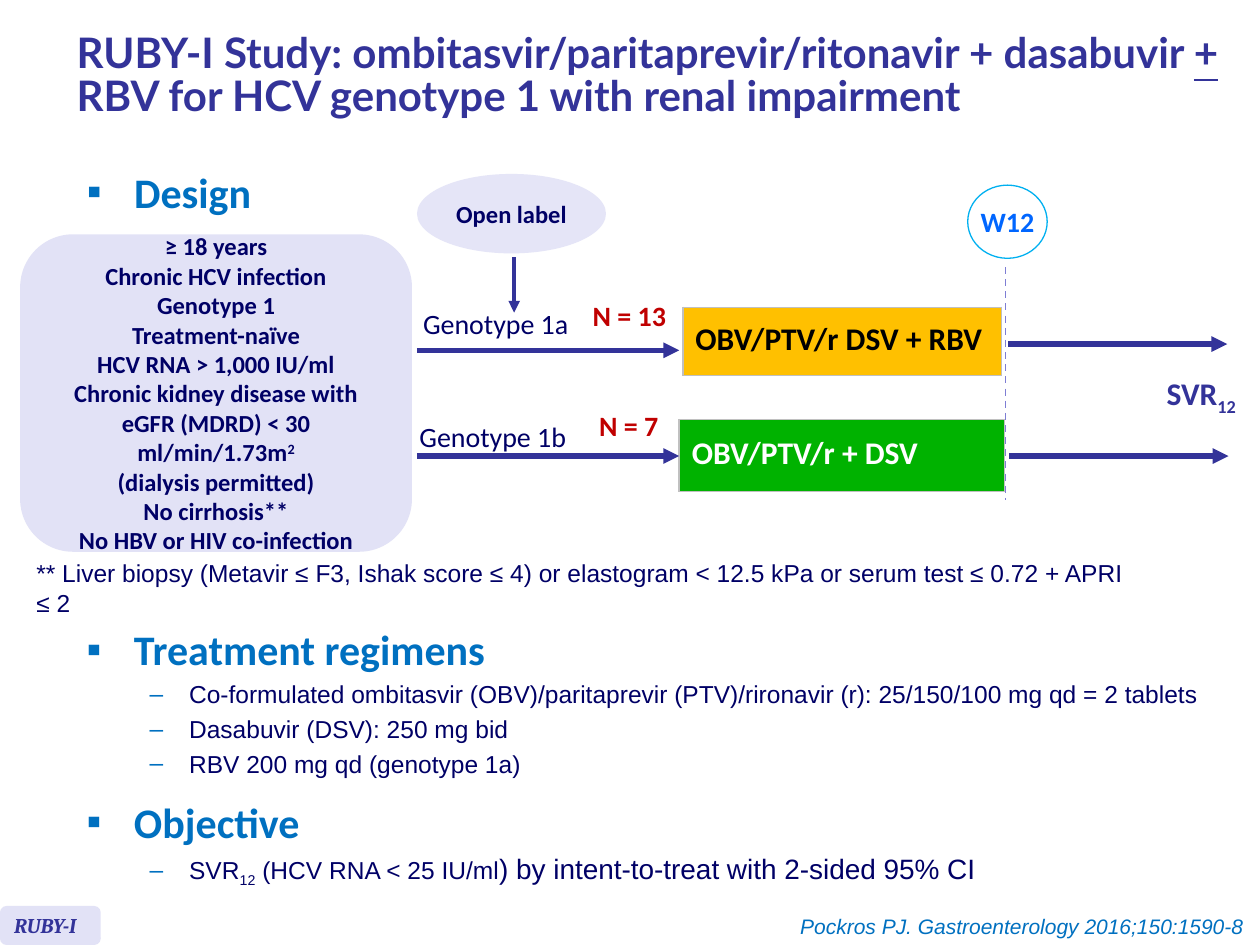
"""Builds the RUBY-I study design slide."""
from lxml import etree
from pptx import Presentation
from pptx.dml.color import RGBColor
from pptx.enum.dml import MSO_LINE_DASH_STYLE as Dash
from pptx.enum.shapes import MSO_CONNECTOR as Conn, MSO_SHAPE as Shape
from pptx.enum.text import MSO_ANCHOR as Anchor, PP_ALIGN as Align
from pptx.oxml.ns import qn
from pptx.util import Pt

INDIGO, NAVY, BLUE, RED, PALE = "333399", "000066", "0070C0", "C00000", "E2E2F6"

TITLE = [("RUBY-I Study: ombitasvir/paritaprevir/ritonavir + dasabuvir ", {}),
         ("+", {"underline": True}),
         (" RBV for HCV genotype 1 with renal impairment", {})]
CRITERIA = ["≥ 18 years", "Chronic HCV infection", "Genotype 1", "Treatment-naïve",
            "HCV RNA > 1,000 IU/ml", "Chronic kidney disease with",
            [("eGFR (MDRD) < 30 ml/min/1.73m", {}), ("2", {"base": 30})],
            "(dialysis permitted)", "No cirrhosis**", "No HBV or HIV co-infection"]
SECTIONS = [
    ((42.5, 91.4, 142.6, 45.4), "Design", []),
    ((42.5, 352.8, 657.4, 107.3), "Treatment regimens", [
        "Co-formulated ombitasvir (OBV)/paritaprevir (PTV)/rironavir (r): "
        "25/150/100 mg qd = 2 tablets",
        "Dasabuvir (DSV): 250 mg bid",
        "RBV 200 mg qd (genotype 1a)"]),
    ((42.5, 451.4, 657.4, 67), "Objective", [
        [("SVR", {}), ("12", {"base": -25}), (" (HCV RNA < 25 IU/ml", {}),
         (") by intent-to-treat with 2-sided 95% CI", {"size": 16})]]),
]
ARMS = [("OBV/PTV/r + DSV", (388.1, 239.8, 185.8, 41), "00B200", "FFFFFF"),
        ("OBV/PTV/r DSV + RBV", (390.2, 175.7, 182.2, 38.9), "FFC000", "000000")]
ARROWS = [((293.8, 146.9, 293.8, 178.6), 2.25),
          ((238.3, 200.2, 388.1, 200.2), 3),
          ((238.3, 260.6, 388.1, 260.6), 3),
          ((576, 196.6, 701.3, 196.6), 3),
          ((576.7, 260.6, 702, 260.6), 3)]
SHAPES = [
    (Shape.OVAL, (238.3, 99.4, 108, 45.4), "E5E5F7", None, ["Open label"],
     Align.CENTER, dict(size=14, color=NAVY, bold=True)),
    (Shape.ROUNDED_RECTANGLE, (11.5, 133.9, 223.9, 181.4), PALE, None, CRITERIA,
     Align.CENTER, dict(size=14, color=NAVY, bold=True)),
    (Shape.ROUNDED_RECTANGLE, (0, 517.7, 57.6, 22.3), PALE, None, ["RUBY-I"],
     Align.LEFT, dict(size=12, name="Cambria", color=INDIGO, bold=True, italic=True)),
    (Shape.OVAL, (553, 105.8, 45.4, 41.8), "FFFFFF", "00B0F0", ["W12"],
     Align.CENTER, dict(size=16, color="0066FF", bold=True)),
]
COUNT = dict(size=16, color=RED, bold=True)
GENOTYPE = dict(size=16, color=NAVY)
LABELS = [
    ([("SVR", {}), ("12", {"base": -25})], (659.5, 210.2, 56.2, 28.8), Align.LEFT,
     dict(size=18, color=INDIGO, bold=True)),
    ("** Liver biopsy (Metavir ≤ F3, Ishak score ≤ 4) or elastogram < 12.5 kPa "
     "or serum test ≤ 0.72 + APRI ≤ 2", (13.7, 315.4, 643.7, 24.5), Align.LEFT,
     dict(size=14, name="Arial", color=NAVY)),
    ("N = 13", (331.2, 167, 56.9, 26.6), Align.CENTER, COUNT),
    ("N = 7", (334.8, 229.7, 49, 26.6), Align.CENTER, COUNT),
    ("Genotype 1a", (234.7, 171.4, 98.6, 26.6), Align.LEFT, GENOTYPE),
    ("Genotype 1b", (232.6, 236.2, 99.4, 26.6), Align.LEFT, GENOTYPE),
    ("Pockros PJ. Gastroenterology 2016;150:1590-8", (441.4, 518.4, 276.5, 21.6),
     Align.RIGHT, dict(size=12, name="Arial", color=BLUE, italic=True)),
]


def rgb(color):
    return RGBColor.from_string(color)


def pts(values):
    return [Pt(v) for v in values]


def style(r, size, color, name="Calibri", bold=False, italic=False, underline=None, base=0):
    f = r.font
    f.size, f.name, f.bold, f.italic = Pt(size), name, bold, italic
    f.color.rgb = rgb(color)
    if underline:
        f.underline = True
    if base:
        r._r.get_or_add_rPr().set("baseline", str(base * 1000))


def write(p, content, look, align=Align.LEFT):
    p.alignment = align
    for text, extra in [(content, {})] if isinstance(content, str) else content:
        r = p.add_run()
        r.text = text
        style(r, **{**look, **extra})


def paragraphs(tf, count):
    return [tf.paragraphs[0]] + [tf.add_paragraph() for _ in range(count - 1)]


def bullet(p, char, left, hanging):
    pPr = p._p.get_or_add_pPr()
    pPr.set("marL", str(Pt(left)))
    pPr.set("indent", str(-Pt(hanging)))
    clr = etree.SubElement(pPr, qn("a:buClr"))
    etree.SubElement(clr, qn("a:srgbClr"), val=BLUE)
    etree.SubElement(pPr, qn("a:buFont"), typeface="Arial")
    etree.SubElement(pPr, qn("a:buChar"), char=char)


def textbox(s, box, wrap=True):
    tf = s.shapes.add_textbox(*pts(box)).text_frame
    tf.word_wrap = wrap
    return tf


def add_line(s, ends, width, color):
    c = s.shapes.add_connector(Conn.STRAIGHT, *pts(ends))
    c.line.width = Pt(width)
    c.line.color.rgb = rgb(color)
    etree.SubElement(c._element.spPr, qn("a:effectLst"))
    return c.line


def add_arrow(s, ends, width):
    ln = add_line(s, ends, width, INDIGO)
    etree.SubElement(ln._get_or_add_ln(), qn("a:tailEnd"), type="triangle")


def add_shape(s, kind, box, fill, line, lines, align, look):
    sp = s.shapes.add_shape(kind, *pts(box))
    sp.shadow.inherit = False
    sp.fill.solid()
    sp.fill.fore_color.rgb = rgb(fill)
    if line:
        sp.line.color.rgb = rgb(line)
        sp.line.width = Pt(0.75)
    else:
        sp.line.fill.background()
    tf = sp.text_frame
    tf.vertical_anchor = Anchor.MIDDLE
    tf.word_wrap = len(lines) > 1
    for p, content in zip(paragraphs(tf, len(lines)), lines):
        write(p, content, look, align)


def add_arm(s, text, box, fill, color):
    table = s.shapes.add_table(1, 1, *pts(box)).table
    table.first_row = table.horz_banding = False
    cell = table.cell(0, 0)
    cell.vertical_anchor = Anchor.MIDDLE
    tcPr = cell._tc.get_or_add_tcPr()
    for side in ("lnL", "lnR", "lnT", "lnB"):
        ln = etree.SubElement(tcPr, qn("a:" + side), w=str(Pt(1)))
        solid = etree.SubElement(ln, qn("a:solidFill"))
        etree.SubElement(solid, qn("a:srgbClr"), val="C0C0C0")
    cell.fill.solid()
    cell.fill.fore_color.rgb = rgb(fill)
    p = cell.text_frame.paragraphs[0]
    p.line_spacing = 0.8
    write(p, text, dict(size=18, color=color, bold=True))


def add_section(s, box, heading, items):
    first, *rest = paragraphs(textbox(s, box), 1 + len(items))
    bullet(first, "▪", 27, 27)
    write(first, heading, dict(size=24, color=BLUE, bold=True))
    for p, item in zip(rest, items):
        p.level = 1
        p.space_before = Pt(3)
        bullet(p, "–", 58.5, 22.5)
        write(p, item, dict(size=14, name="Arial", color=NAVY))


def main():
    prs = Presentation()
    prs.slide_width, prs.slide_height = Pt(720), Pt(540)
    s = prs.slides.add_slide(prs.slide_layouts[6])
    add_line(s, (574.6, 152.6, 574.6, 285.8), 1, "7E7ED4").dash_style = Dash.DASH
    tf = textbox(s, (36.7, 5.8, 681.1, 77))
    tf.vertical_anchor = Anchor.MIDDLE
    tf.paragraphs[0].line_spacing = 0.85
    write(tf.paragraphs[0], TITLE, dict(size=24, name="Lato", color=INDIGO, bold=True))
    for arm in ARMS:
        add_arm(s, *arm)
    for shape in SHAPES:
        add_shape(s, *shape)
    for arrow in ARROWS:
        add_arrow(s, *arrow)
    for content, box, align, look in LABELS:
        write(textbox(s, box, wrap=False).paragraphs[0], content, look, align)
    for section in SECTIONS:
        add_section(s, *section)
    prs.save("out.pptx")


if __name__ == "__main__":
    main()
